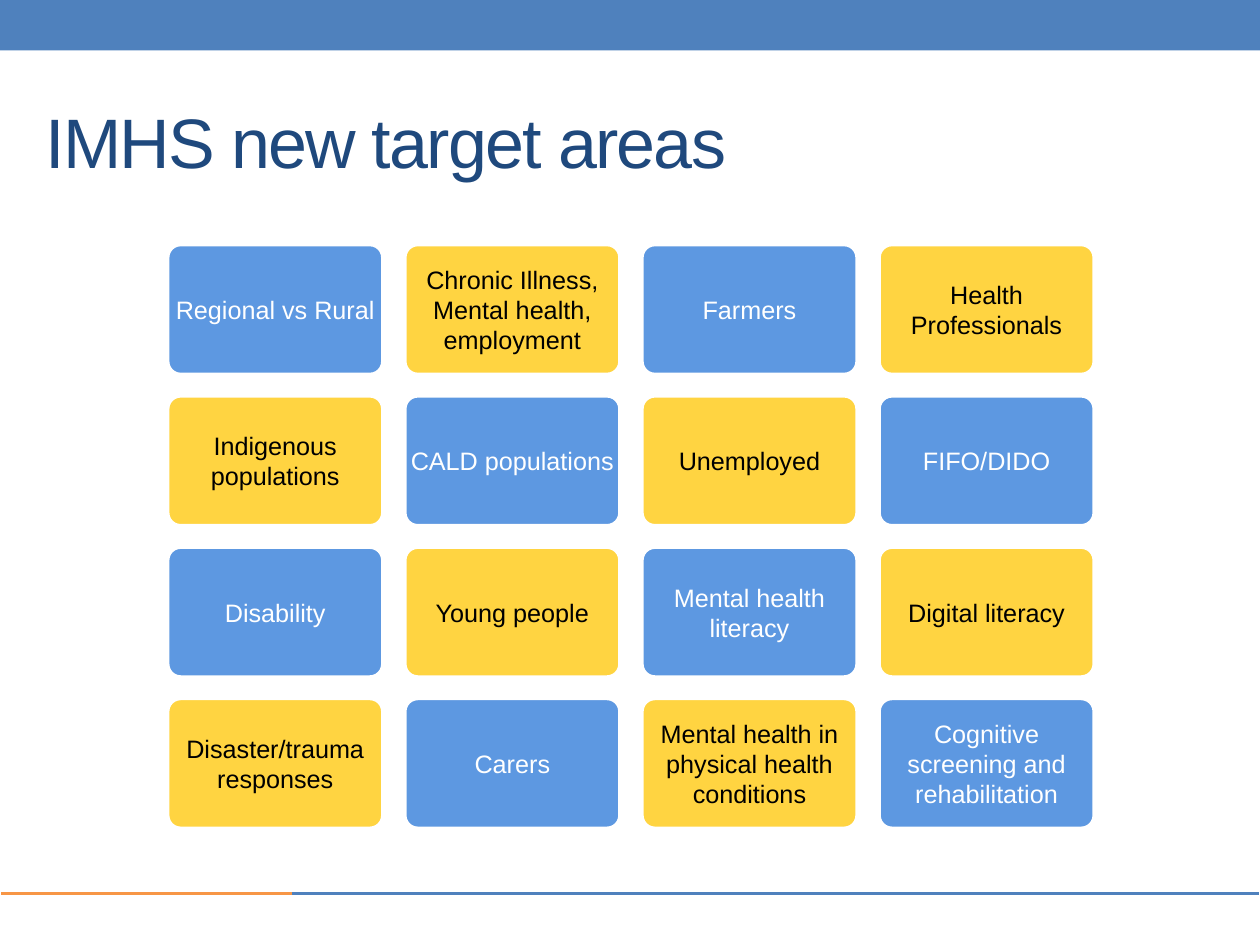
"""Build the slide of new target areas as a checkered grid of cards."""
from lxml import etree
from pptx import Presentation
from pptx import util as u
from pptx.dml.color import RGBColor
from pptx.enum import shapes, text
from pptx.oxml.ns import qn

BLUE, ORANGE, NAVY = "4F81BD", "F79646", "1F497D"
CARD_STYLES = [("5D98E1", "FFFFFF"), ("FFD441", "000000")]
AREAS = [
    ["Regional vs Rural", "Chronic Illness, Mental health, employment",
     "Farmers", "Health Professionals"],
    ["Indigenous populations", "CALD populations", "Unemployed", "FIFO/DIDO"],
    ["Disability", "Young people", "Mental health literacy", "Digital literacy"],
    ["Disaster/trauma responses", "Carers",
     "Mental health in physical health conditions",
     "Cognitive screening and rehabilitation"],
]


def color(value):
    """Turn a hex string into a colour."""
    return RGBColor.from_string(value)


def write(shape, content, size, font_color, inset=0, alignment=None):
    """Set and format the single paragraph of a shape."""
    frame = shape.text_frame
    frame.text = content
    frame.word_wrap = True
    frame.vertical_anchor = text.MSO_ANCHOR.MIDDLE
    frame.margin_left = frame.margin_right = u.Cm(inset)
    frame.margin_top = frame.margin_bottom = u.Cm(inset)
    paragraph = frame.paragraphs[0]
    paragraph.alignment = alignment
    font = paragraph.runs[0].font
    font.name, font.size = "Arial", u.Pt(size)
    font.color.rgb = color(font_color)


def add_banner(slide, width):
    """Add the band across the top of the slide."""
    banner = slide.shapes.add_shape(
        shapes.MSO_SHAPE.RECTANGLE, 0, 0, width, u.Cm(1.02))
    banner.shadow.inherit = False
    banner.fill.solid()
    banner.fill.fore_color.rgb = color(BLUE)
    banner.line.fill.background()


def add_rule(slide, start, end, line_color):
    """Add one part of the footer line."""
    height = u.Cm(18.01)
    rule = slide.shapes.add_connector(
        shapes.MSO_CONNECTOR.STRAIGHT, u.Cm(start), height, u.Cm(end), height)
    rule.line.color.rgb = color(line_color)
    rule.line.width = u.Pt(2.08)
    etree.SubElement(rule._element.spPr, qn("a:effectLst"))


def add_title(slide, content):
    """Add the tightly spaced slide title."""
    title = slide.shapes.add_textbox(u.Cm(0.79), u.Cm(1.47), u.Cm(22.86), u.Cm(2.74))
    write(title, content, 40, NAVY, inset=0.13)
    run = title.text_frame.paragraphs[0].runs[0]
    run._r.get_or_add_rPr().set("spc", "-100")


def add_card(slide, row, column, content):
    """Add a rounded card whose style alternates across the grid."""
    fill, font_color = CARD_STYLES[(row + column) % 2]
    card = slide.shapes.add_shape(
        shapes.MSO_SHAPE.ROUNDED_RECTANGLE,
        u.Cm(3.38 + 4.78 * column), u.Cm(4.93 + 3.05 * row), u.Cm(4.34), u.Cm(2.62))
    card.adjustments[0] = 0.1
    card.shadow.inherit = False
    card.fill.solid()
    card.fill.fore_color.rgb = color(fill)
    card.line.color.rgb = color("FFFFFF")
    card.line.width = u.Pt(2.08)
    write(card, content, 14.4, font_color, alignment=text.PP_ALIGN.CENTER)


def main():
    """Build and save the presentation."""
    presentation = Presentation()
    presentation.slide_width, presentation.slide_height = u.Cm(25.4), u.Cm(19.05)
    slide = presentation.slides.add_slide(presentation.slide_layouts[6])
    add_banner(slide, presentation.slide_width)
    add_rule(slide, 5.79, 25.37, BLUE)
    add_rule(slide, 0.03, 5.89, ORANGE)
    add_title(slide, "IMHS new target areas")
    for row, areas in enumerate(AREAS):
        for column, area in enumerate(areas):
            add_card(slide, row, column, area)
    presentation.save("out.pptx")


if __name__ == "__main__":
    main()
